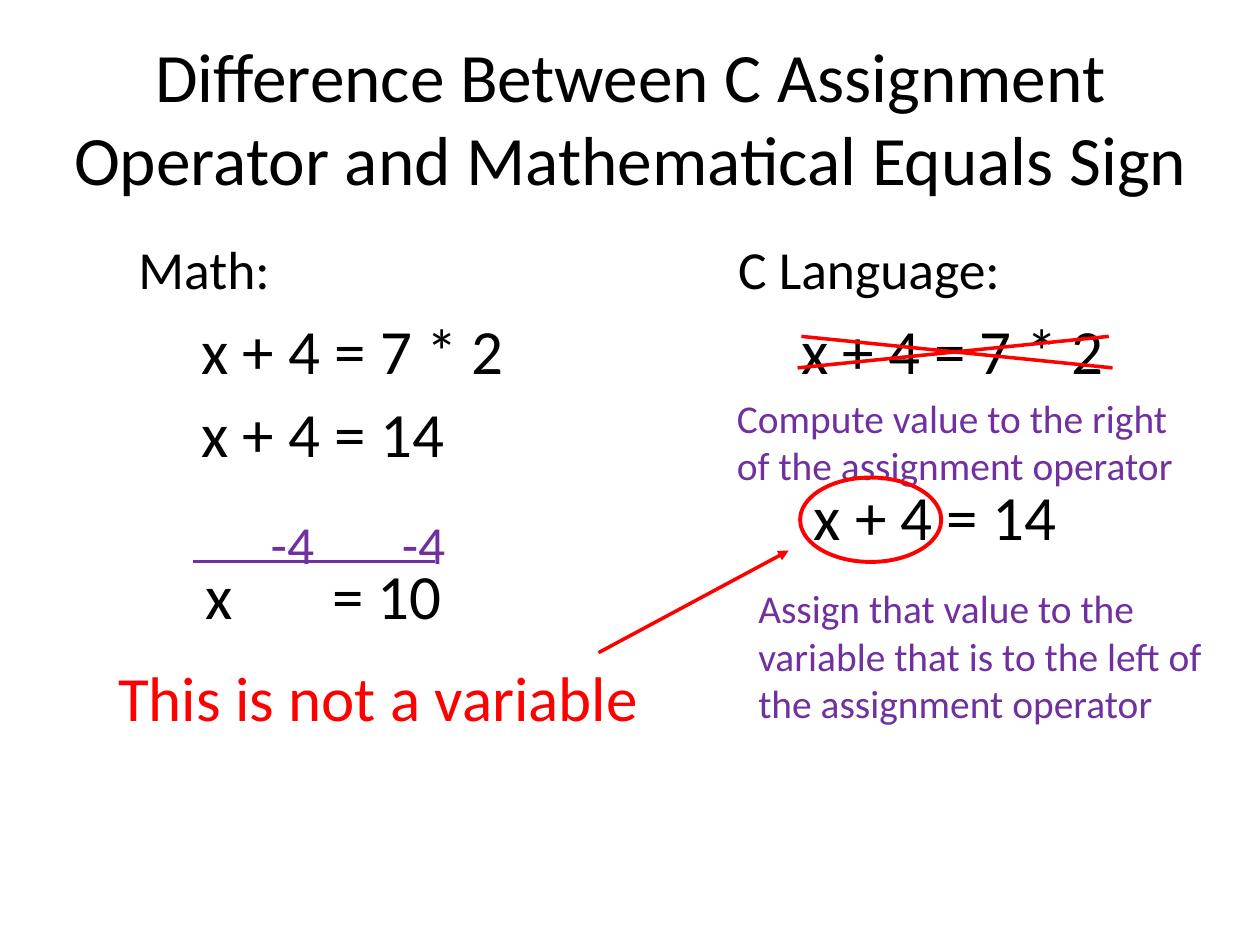
from dataclasses import dataclass

from lxml import etree
from pptx import Presentation
from pptx.dml.color import RGBColor
from pptx.enum.shapes import MSO_CONNECTOR, MSO_SHAPE
from pptx.enum.text import MSO_ANCHOR, PP_ALIGN
from pptx.oxml.ns import qn
from pptx.util import Inches, Pt


@dataclass(frozen=True)
class Theme:
    font: str = "Calibri"
    black: RGBColor = RGBColor(0, 0, 0)
    purple: RGBColor = RGBColor(0x70, 0x30, 0xA0)
    red: RGBColor = RGBColor(0xFF, 0, 0)
    title: float = 39.6
    equation: float = 36
    heading: float = 30.6
    note: float = 22.5


T = Theme()

prs = Presentation()
prs.slide_width, prs.slide_height = Inches(10), Inches(7.5)
s = prs.slides.add_slide(prs.slide_layouts[6])


def add_text(text, x, y, w, h, size, color=T.black):
    tf = s.shapes.add_textbox(Inches(x), Inches(y), Inches(w), Inches(h)).text_frame
    tf.word_wrap = True
    p = tf.paragraphs[0]
    p.text = text
    p.font.name, p.font.size, p.font.color.rgb = T.font, Pt(size), color
    return tf


def add_line(shapes, x1, y1, x2, y2, color, width):
    line = shapes.add_connector(MSO_CONNECTOR.STRAIGHT, Inches(x1), Inches(y1),
                                Inches(x2), Inches(y2))
    line.line.color.rgb, line.line.width = color, Pt(width)
    etree.SubElement(line._element.spPr, qn("a:effectLst"))
    return line


# Title
tf = add_text("Difference Between C Assignment Operator and Mathematical Equals Sign",
              0.42, 0.3, 9.17, 1.25, T.title)
tf.vertical_anchor = MSO_ANCHOR.MIDDLE
tf.paragraphs[0].alignment = PP_ALIGN.CENTER

# Column headings
for text, x, w in (("Math:", 1, 1.58), ("C Language:", 5.76, 2.99)):
    add_text(text, x, 1.82, w, 0.53, T.heading)

# Equations
for text, x, y in (
    ("x + 4 = 7 * 2", 1.5, 2.42),
    ("x + 4 = 14", 1.5, 3.08),
    ("x + 4 = 7 * 2", 6.26, 2.42),
    ("x + 4 = 14", 6.36, 3.74),
):
    add_text(text, x, y, 2.75, 0.72, T.equation)

# Subtraction on both sides, with its rule and result
for x in (2.05, 3.09):
    add_text("-4", x, 4.01, 0.58, 0.53, T.heading, T.purple)
tf = add_text("x\t= 10", 1.53, 4.37, 2.1, 0.72, T.equation)
tabs = etree.Element(qn("a:tabLst"))
etree.SubElement(tabs, qn("a:tab"), pos=str(Inches(1.01)), algn="l")
tf.paragraphs[0]._p.get_or_add_pPr().insert(0, tabs)  # tab stops precede defRPr
add_line(s.shapes, 1.53, 4.46, 3.45, 4.46, T.purple, 1.75)

# Explanations of the assignment steps
add_text("Compute value to the right of the assignment operator",
         5.75, 3.08, 3.83, 0.84, T.note, T.purple)
add_text("Assign that value to the variable that is to the left of the assignment operator",
         5.92, 4.59, 4, 1.08, T.note, T.purple)

# Circled expression with its callout
sp = s.shapes.add_shape(MSO_SHAPE.OVAL, Inches(6.35), Inches(3.79), Inches(1.12), Inches(0.67))
sp.shadow.inherit = False
sp.fill.background()
sp.line.color.rgb, sp.line.width = T.red, Pt(2.25)
add_text("This is not a variable", 0.84, 5.18, 4.5, 1.08, T.equation, T.red)
arrow = add_line(s.shapes, 4.75, 5.18, 6.26, 4.37, T.red, 2)
etree.SubElement(arrow.line._get_or_add_ln(), qn("a:tailEnd"), type="triangle")

# Cross over the invalid statement
cross = s.shapes.add_group_shape()
add_line(cross.shapes, 6.36, 2.67, 8.83, 2.92, T.red, 2)
add_line(cross.shapes, 8.8, 2.67, 6.33, 2.92, T.red, 2)

prs.save("out.pptx")
